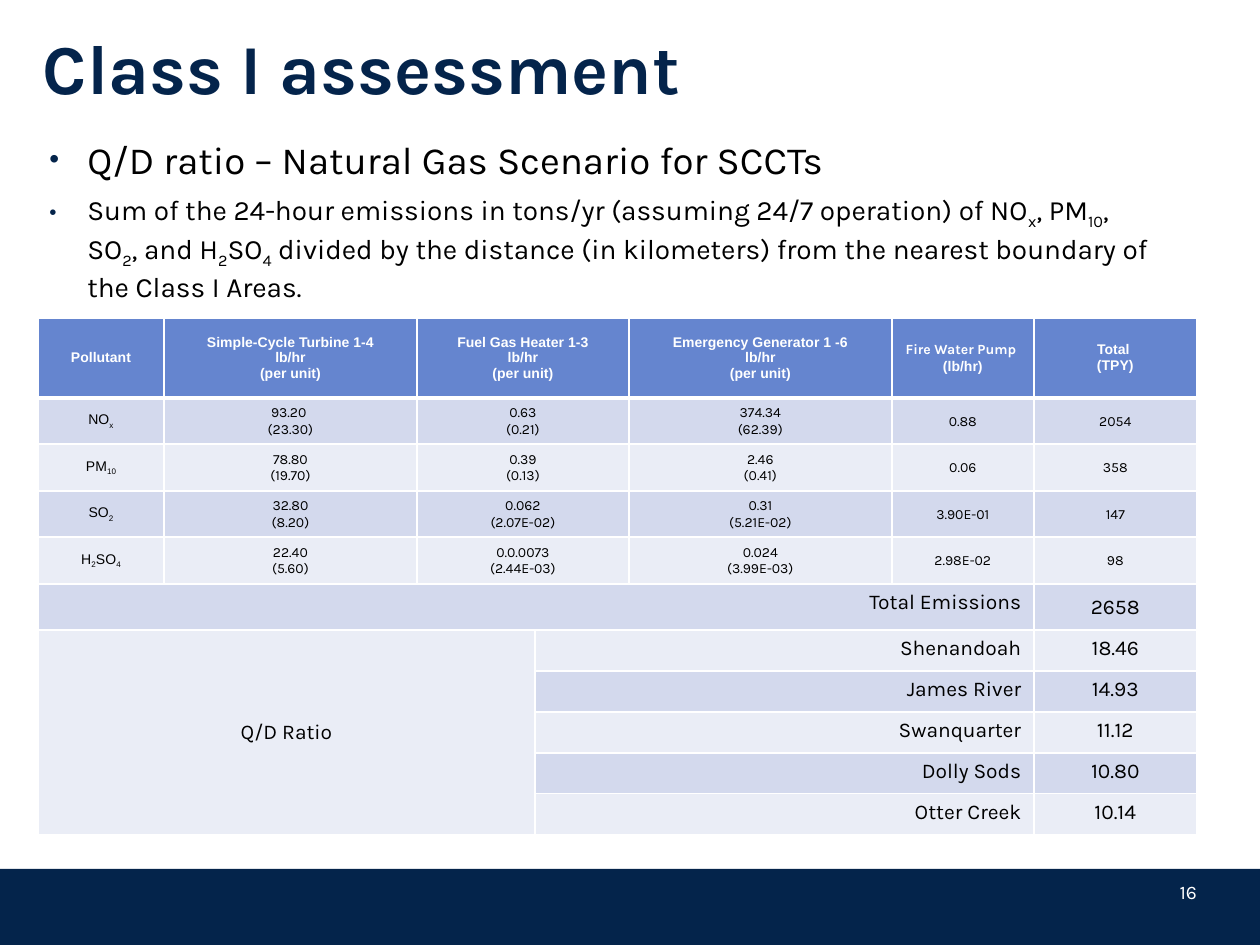
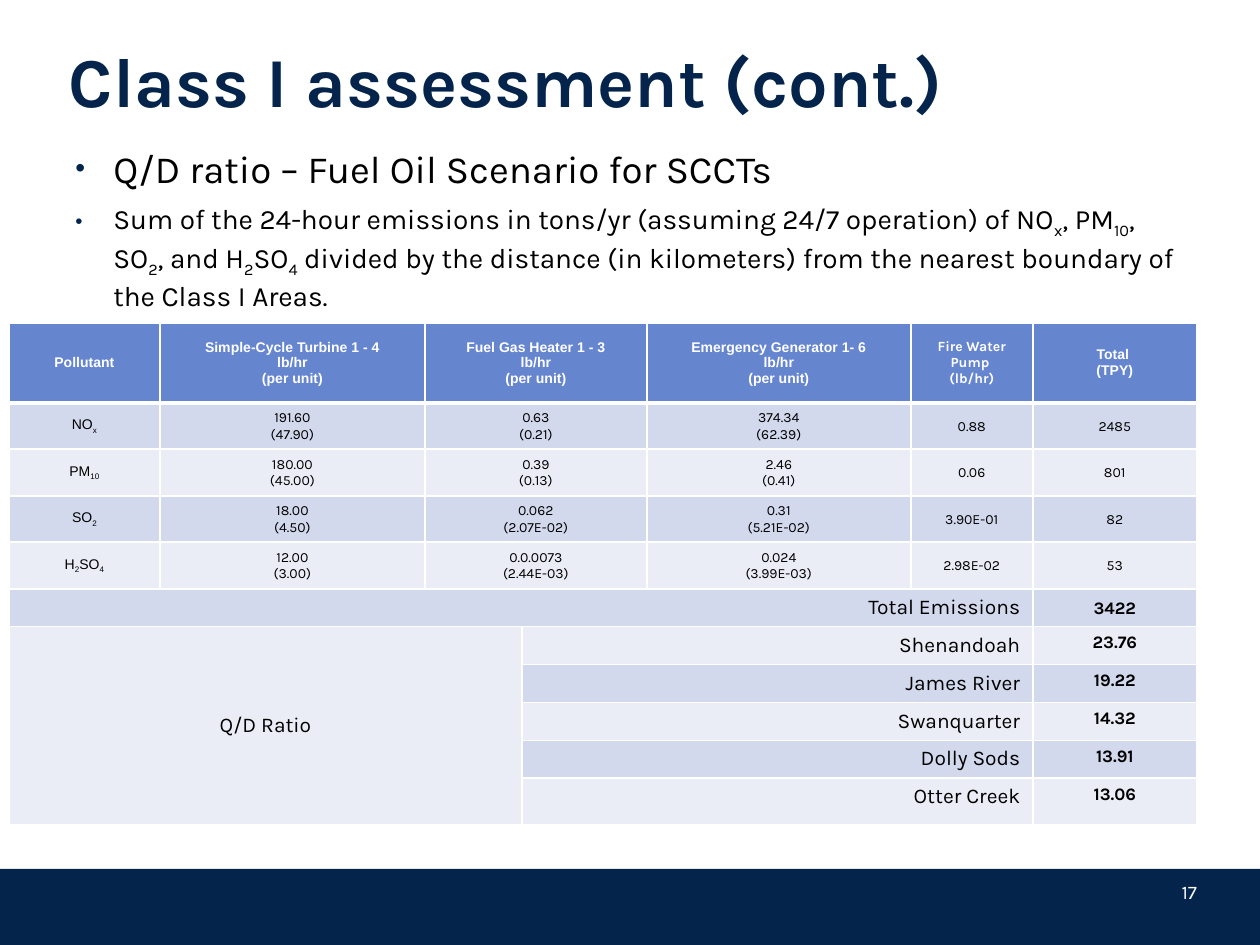
from dataclasses import dataclass
from lxml.etree import SubElement
from pptx import Presentation
from pptx.dml.color import RGBColor
from pptx.enum.shapes import MSO_SHAPE
from pptx.enum.text import MSO_ANCHOR, PP_ALIGN
from pptx.oxml import parse_xml
from pptx.oxml.ns import nsdecls, qn
from pptx.util import Pt

PX = 914400 / 126


@dataclass(frozen=True)
class Theme:
    navy: str = "04244B"
    white: str = "FFFFFF"
    black: str = "000000"
    header: str = "6585CF"
    bands: tuple = ("EAEDF6", "D3D9ED")
    text: str = "Karla"
    label: str = "Arial"
    title_size: int = 40
    lead_size: int = 22
    body_size: int = 16
    sum_size: int = 12
    page_size: int = 11
    bold_sum_size: int = 10
    cell_size: int = 8


THEME = Theme()

DEFINITION = (
    "Sum of the 24-hour emissions in tons/yr (assuming 24/7 operation) of NO[x], PM[10], "
    "SO[2], and H[2]SO[4] divided by the distance (in kilometers) from the nearest boundary "
    "of the Class I Areas."
)
POLLUTANTS = ["NO[x]", "PM[10]", "SO[2]", "H[2]SO[4]"]
HEATERS = [("0.63", "(0.21)"), ("0.39", "(0.13)"), ("0.062", "(2.07E-02)"), ("0.0.0073", "(2.44E-03)")]
GENERATORS = [("374.34", "(62.39)"), ("2.46", "(0.41)"), ("0.31", "(5.21E-02)"), ("0.024", "(3.99E-03)")]
PUMP = ["0.88", "0.06", "3.90E-01", "2.98E-02"]
AREAS = ["Shenandoah", "James River", "Swanquarter", "Dolly Sods", "Otter Creek"]
UNITS = ("lb/hr", "(per unit)")

SCENARIOS = [
    {
        "title": "Class I assessment",
        "lead": "Q/D ratio – Natural Gas Scenario for SCCTs",
        "page": "16",
        "title_box": (37, 16, 1134, 92),
        "body_box": (37, 130, 1134, 170),
        "table_corner": (38, 318),
        "columns": [126, 253, 118, 94, 263, 142, 163],
        "rows": [80, 46, 47, 46, 47, 46, 41, 41, 41, 41, 41],
        "units": ["Simple-Cycle Turbine 1-4", "Fuel Gas Heater 1-3", "Emergency Generator 1 -6"],
        "pump_fonts": (THEME.text, THEME.label),
        "turbines": [("93.20 ", "(23.30)"), ("78.80", "(19.70)"), ("32.80", "(8.20)"), ("22.40", "(5.60)")],
        "totals": ["2054", "358", "147", "98"],
        "sum": "2658",
        "ratios": ["18.46", "14.93", "11.12", "10.80", "10.14"],
        "sum_format": {"size": THEME.sum_size, "bold": False},
    },
    {
        "title": "Class I assessment (cont.)",
        "lead": "Q/D ratio – Fuel Oil Scenario for SCCTs",
        "page": "17",
        "title_box": (63, 29, 1134, 92),
        "body_box": (63, 139, 1134, 176),
        "table_corner": (9, 323),
        "columns": [151, 265, 97, 125, 264, 122, 164],
        "rows": [80, 46, 47, 46, 47, 37, 37, 37, 37, 37, 47],
        "units": ["Simple-Cycle Turbine 1 - 4", "Fuel Gas Heater 1 - 3", "Emergency Generator 1- 6"],
        "pump_fonts": (THEME.text, THEME.text),
        "turbines": [("191.60", "(47.90)"), ("180.00", "(45.00)"), ("18.00", "(4.50)"), ("12.00", "(3.00)")],
        "totals": ["2485", "801", "82", "53"],
        "sum": "3422",
        "ratios": ["23.76", "19.22", "14.32", "13.91", "13.06"],
        "sum_format": {"size": THEME.bold_sum_size, "bold": True},
    },
]


def px(length):
    return round(length * PX)


def rgb(color):
    return RGBColor.from_string(color)


def assign(target, values):
    for name, value in values.items():
        setattr(target, name, value)


def write_line(paragraph, line, size, name=THEME.text, color=THEME.black, bold=False, align=PP_ALIGN.LEFT):
    paragraph.alignment = align
    for position, part in enumerate(line.replace("]", "[").split("[")):
        if not part:
            continue
        run = paragraph.add_run()
        run.text = part
        assign(run.font, {"size": Pt(size), "name": name, "bold": bold})
        run.font.color.rgb = rgb(color)
        if position % 2:
            run._r.get_or_add_rPr().set("baseline", "-25000")


def add_paragraph(frame, index):
    return frame.add_paragraph() if index else frame.paragraphs[0]


def add_frame(slide, box, **settings):
    frame = slide.shapes.add_textbox(*map(px, box)).text_frame
    assign(frame, {"word_wrap": True, **settings})
    return frame


def add_bullet(paragraph):
    properties = paragraph._p.get_or_add_pPr()
    assign_indents = {"marL": px(38), "indent": -px(38)}
    for name, value in assign_indents.items():
        properties.set(name, str(value))
    color = SubElement(properties, qn("a:buClr"))
    SubElement(color, qn("a:srgbClr")).set("val", THEME.navy)
    SubElement(properties, qn("a:buSzPct")).set("val", "73000")
    SubElement(properties, qn("a:buFont")).set("typeface", THEME.label)
    SubElement(properties, qn("a:buChar")).set("char", "•")


def add_band_and_page(slide, page):
    band = slide.shapes.add_shape(MSO_SHAPE.RECTANGLE, 0, px(869), px(1260), px(76))
    band.shadow.inherit = False
    band.fill.solid()
    band.fill.fore_color.rgb = rgb(THEME.navy)
    band.line.fill.background()
    flat = {f"margin_{side}": 0 for side in ("left", "top", "right", "bottom")}
    frame = add_frame(slide, (1116, 872, 81, 31), vertical_anchor=MSO_ANCHOR.BOTTOM, **flat)
    write_line(frame.paragraphs[0], page, THEME.page_size, color=THEME.white, align=PP_ALIGN.RIGHT)


def add_heading(slide, scenario):
    margins = {"margin_left": px(6), "margin_right": px(6), "margin_top": 0, "margin_bottom": 0}
    title = add_frame(slide, scenario["title_box"], vertical_anchor=MSO_ANCHOR.BOTTOM, **margins)
    write_line(title.paragraphs[0], scenario["title"], THEME.title_size, color=THEME.navy, bold=True)
    body = add_frame(slide, scenario["body_box"])
    points = [(scenario["lead"], THEME.lead_size), (DEFINITION, THEME.body_size)]
    for index, (point, size) in enumerate(points):
        paragraph = add_paragraph(body, index)
        add_bullet(paragraph)
        if index:
            paragraph.space_before = Pt(6)
        write_line(paragraph, point, size)


def style_cell(cell, row):
    cell.fill.solid()
    cell.fill.fore_color.rgb = rgb(THEME.bands[row % 2] if row else THEME.header)
    widths = {"L": 1, "R": 1, "T": 3 if row == 1 else 1, "B": 1 if row else 3}
    for position, (side, width) in enumerate(widths.items()):
        cell._tc.get_or_add_tcPr().insert(position, parse_xml(
            f'<a:ln{side} {nsdecls("a")} w="{Pt(width)}"><a:solidFill>'
            f'<a:srgbClr val="{THEME.white}"/></a:solidFill></a:ln{side}>'
        ))


def fill_cell(cell, lines, fonts=(THEME.text,), middle=True, tight=False, **style):
    cell.vertical_anchor = MSO_ANCHOR.MIDDLE if middle else MSO_ANCHOR.TOP
    if tight:
        assign(cell, {"margin_left": px(1), "margin_right": px(1), "margin_top": px(1), "margin_bottom": 0})
    for index, line in enumerate(lines):
        write_line(add_paragraph(cell.text_frame, index), line,
                   name=fonts[index % len(fonts)], **{"align": PP_ALIGN.CENTER, **style})


def add_emissions_table(slide, scenario):
    columns, rows = scenario["columns"], scenario["rows"]
    left, top = scenario["table_corner"]
    table = slide.shapes.add_table(len(rows), len(columns), px(left), px(top),
                                   px(sum(columns)), px(sum(rows))).table
    assign(table, {"first_row": False, "horz_banding": False})
    for column, width in zip(table.columns, columns):
        column.width = px(width)
    for row, height in zip(table.rows, rows):
        row.height = px(height)
    for row in range(len(rows)):
        for column in range(len(columns)):
            style_cell(table.cell(row, column), row)

    sum_row = len(POLLUTANTS) + 1
    first_area = sum_row + 1
    spans = [(row, 2, row, 3) for row in range(sum_row)]
    spans += [(sum_row, 0, sum_row, 5), (first_area, 0, len(rows) - 1, 2)]
    spans += [(row, 3, row, 5) for row in range(first_area, len(rows))]
    for start_row, start, end_row, end in spans:
        table.cell(start_row, start).merge(table.cell(end_row, end))

    value_columns = (0, 1, 2, 4, 5, 6)
    header = [("Pollutant",), *[(unit, *UNITS) for unit in scenario["units"]],
              ("Fire Water Pump ", "(lb/hr)"), ("Total ", "(TPY)")]
    for column, lines in zip(value_columns, header):
        fonts = scenario["pump_fonts"] if column == 5 else (THEME.label,)
        fill_cell(table.cell(0, column), lines, fonts, size=THEME.cell_size, color=THEME.white, bold=True)

    records = zip(POLLUTANTS, scenario["turbines"], HEATERS, GENERATORS, PUMP, scenario["totals"])
    for row, (pollutant, turbine, heater, generator, pump, total) in enumerate(records, 1):
        emissions = [(pollutant,), turbine, heater, generator, (pump,), (total,)]
        for column, lines in zip(value_columns, emissions):
            font = THEME.text if column else THEME.label
            fill_cell(table.cell(row, column), lines, (font,), tight=column > 0, size=THEME.cell_size)

    label = {"size": THEME.sum_size, "align": PP_ALIGN.RIGHT, "middle": False}
    fill_cell(table.cell(sum_row, 0), ["Total Emissions"], **label)
    fill_cell(table.cell(sum_row, 6), [scenario["sum"]], tight=True, **scenario["sum_format"])
    fill_cell(table.cell(first_area, 0), ["Q/D Ratio"], size=THEME.sum_size)
    for row, (area, ratio) in enumerate(zip(AREAS, scenario["ratios"]), first_area):
        fill_cell(table.cell(row, 3), [area], **label)
        fill_cell(table.cell(row, 6), [ratio], middle=False, **scenario["sum_format"])


def main():
    deck = Presentation()
    assign(deck, {"slide_width": px(1260), "slide_height": px(945)})
    for scenario in SCENARIOS:
        slide = deck.slides.add_slide(deck.slide_layouts[6])
        add_band_and_page(slide, scenario["page"])
        add_heading(slide, scenario)
        add_emissions_table(slide, scenario)
    deck.save("out.pptx")


if __name__ == "__main__":
    main()
